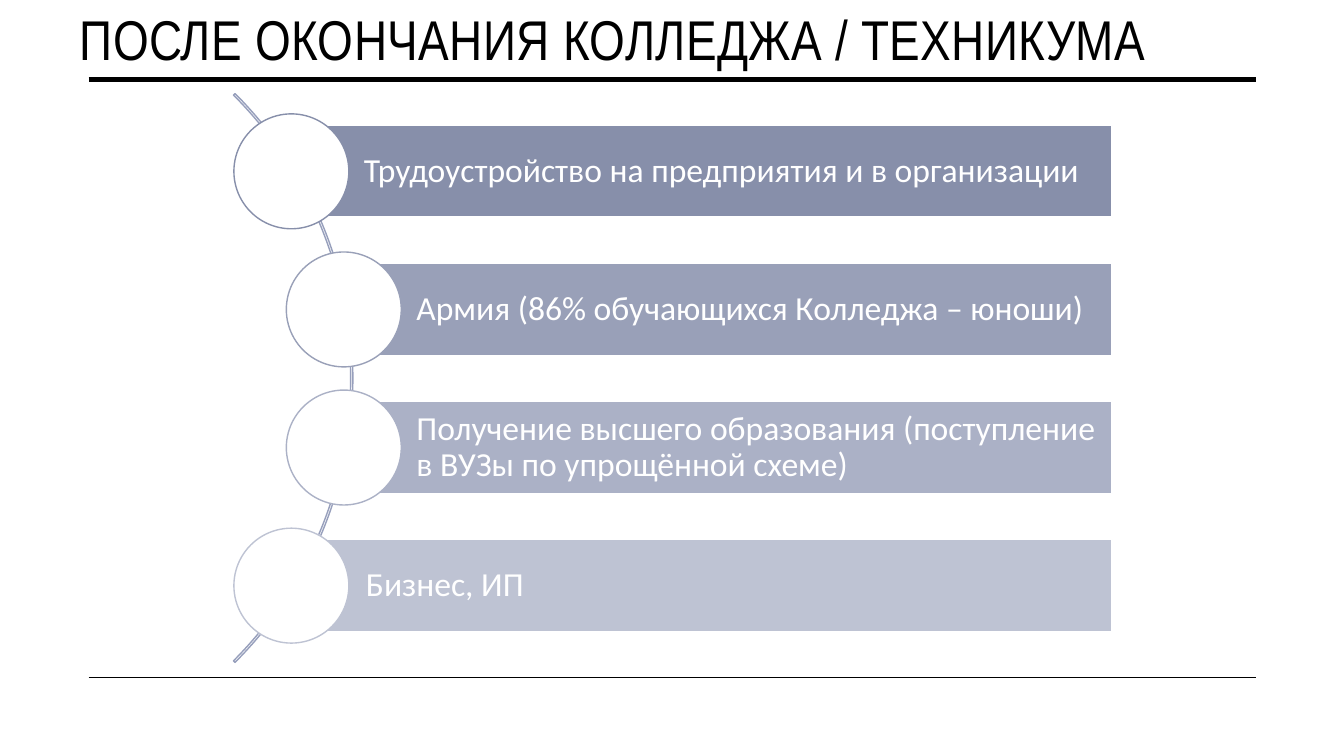
from dataclasses import dataclass
from lxml.etree import SubElement
from pptx import Presentation
from pptx.dml.color import RGBColor
from pptx.enum.shapes import MSO_CONNECTOR, MSO_SHAPE as SHAPE
from pptx.enum.text import MSO_ANCHOR as ANCHOR, PP_ALIGN as ALIGN
from pptx.oxml.ns import qn
from pptx.util import Inches, Pt

# Content: text, bar left, circle left, colour
TITLE = "ПОСЛЕ ОКОНЧАНИЯ КОЛЛЕДЖА / ТЕХНИКУМА"
PATHS = [
    ("Трудоустройство на предприятия и в организации", 2.89, 2.32, "878FAA"),
    ("Армия (86% обучающихся Колледжа – юноши)", 3.41, 2.84, "99A0B8"),
    ("Получение высшего образования (поступление в ВУЗы по упрощённой схеме)",
     3.41, 2.84, "ABB1C6"),
    ("Бизнес, ИП", 2.91, 2.32, "BEC3D3"),
]
RULES = [(0.79, 3.5), (6.72, 1)]  # height on the slide, line width


@dataclass(frozen=True)
class Theme:
    ink: str = "000000"
    paper: str = "FFFFFF"
    arc: str = "979FBC"
    title_font: str = "Arial Narrow"
    body_font: str = "Calibri"
    title_size: int = 40
    body_size: int = 24


# Layout in inches
T = Theme()
WIDTH, HEIGHT = 13.33, 7.5
RULE_LEFT, RULE_RIGHT = 0.88, 12.46
BAR_RIGHT, BAR_H = 11.03, 0.91
CIRCLE = 1.14
FIRST_MIDDLE, PITCH = 1.7, 1.37
ARC_SIZE, ARC_LEFT = 7.98, -4.48
ARC_TOP = (HEIGHT - ARC_SIZE) / 2


def rgb(value):
    return RGBColor.from_string(value)


def add_box(s, kind, left, top, width, height, fill, line):
    sp = s.shapes.add_shape(kind, *map(Inches, (left, top, width, height)))
    sp.shadow.inherit = False
    if fill:
        sp.fill.solid()
        sp.fill.fore_color.rgb = rgb(fill)
    else:
        sp.fill.background()
    sp.line.color.rgb = rgb(line)
    sp.line.width = Pt(1)
    return sp


def write(sp, text, font, size, color, insets, anchor):
    tf = sp.text_frame
    tf.word_wrap = True
    tf.vertical_anchor = anchor
    tf.margin_left, tf.margin_top, tf.margin_right, tf.margin_bottom = map(Inches, insets)
    p = tf.paragraphs[0]
    p.text = text
    p.alignment = ALIGN.LEFT
    r = p.runs[0]
    r.font.name, r.font.size, r.font.color.rgb = font, Pt(size), rgb(color)
    return p


def add_rule(s, y, width):
    line = s.shapes.add_connector(
        MSO_CONNECTOR.STRAIGHT, *map(Inches, (RULE_LEFT, y, RULE_RIGHT, y)))
    line.line.color.rgb = rgb(T.ink)
    line.line.width = Pt(width)
    SubElement(line._element.spPr, qn("a:effectLst"))


def add_path(s, row, text, bar_left, circle_left, color):
    middle = FIRST_MIDDLE + row * PITCH
    bar = add_box(s, SHAPE.RECTANGLE, bar_left, middle - BAR_H / 2,
                  BAR_RIGHT - bar_left, BAR_H, color, T.paper)
    p = write(bar, text, T.body_font, T.body_size, T.paper,
              (0.72, 0.07, 0.07, 0.07), ANCHOR.MIDDLE)
    p.line_spacing = 0.9
    add_box(s, SHAPE.OVAL, circle_left, middle - CIRCLE / 2,
            CIRCLE, CIRCLE, T.paper, color)


def main():
    prs = Presentation()
    prs.slide_width, prs.slide_height = Inches(WIDTH), Inches(HEIGHT)
    s = prs.slides.add_slide(prs.slide_layouts[6])

    # Rules and title
    for y, width in RULES:
        add_rule(s, y, width)
    title = s.shapes.add_textbox(*map(Inches, (0.69, 0, 11.85, 0.79)))
    p = write(title, TITLE, T.title_font, T.title_size, T.ink,
              (0.1, 0.05, 0.1, 0.05), ANCHOR.TOP)
    p.runs[0]._r.get_or_add_rPr().set("spc", "30")

    # Thin arc that joins the circles, from 315 to 45 degrees
    arc = add_box(s, SHAPE.BLOCK_ARC, ARC_LEFT, ARC_TOP, ARC_SIZE, ARC_SIZE, None, T.arc)
    for i, value in enumerate((189, 27, 0.0027)):
        arc.adjustments[i] = value

    # Bars with circles
    for row, item in enumerate(PATHS):
        add_path(s, row, *item)

    prs.save("out.pptx")


if __name__ == "__main__":
    main()
